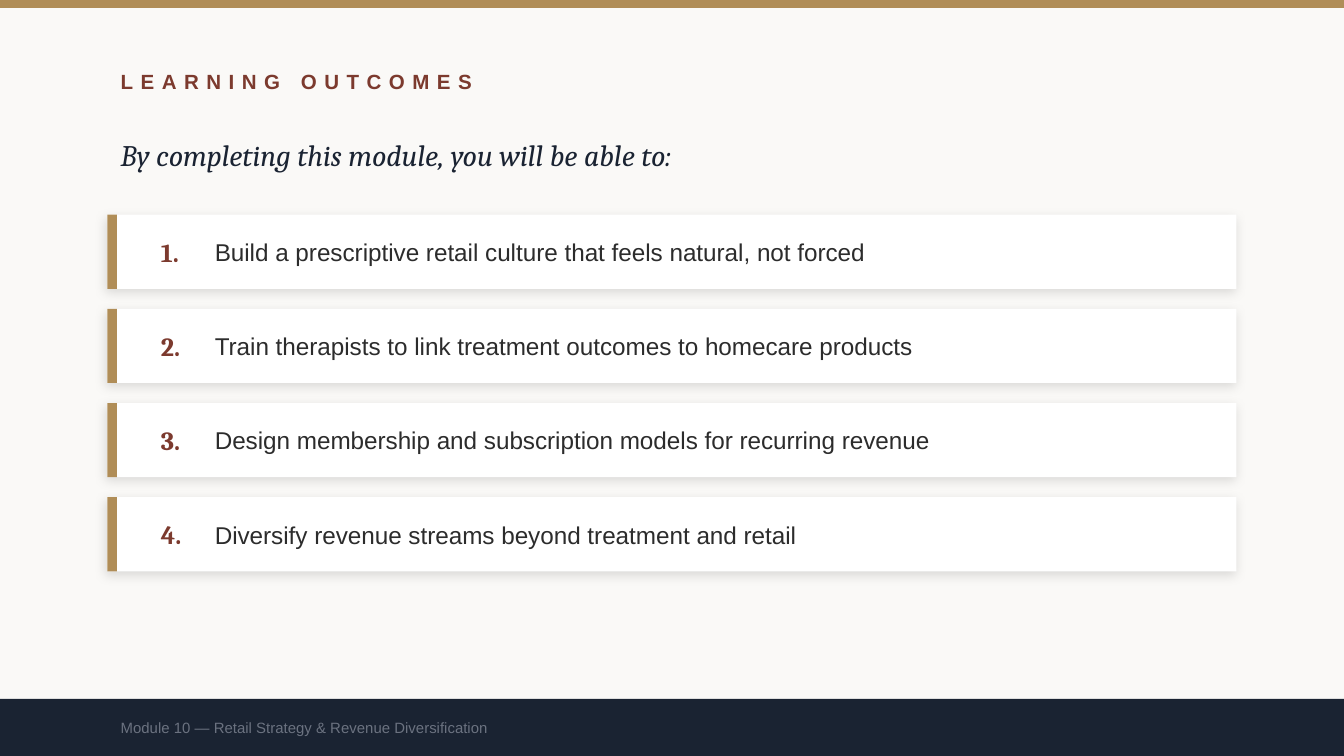
from dataclasses import dataclass

from lxml.etree import SubElement as add_child
from pptx import Presentation
from pptx.dml.color import RGBColor as Color
from pptx.enum.shapes import MSO_SHAPE as Shape
from pptx.enum.text import MSO_ANCHOR as Anchor
from pptx.oxml.ns import qn
from pptx.util import Cm, Pt


@dataclass(frozen=True)
class Theme:
    """Colours and text formats of the deck."""

    paper: str = "FAF9F7"
    card: str = "FFFFFF"
    gold: str = "B08D57"
    rust: str = "7C3A2E"
    navy: str = "1A2332"
    ink: str = "2C2C2C"
    grey: str = "6B7280"
    shadow: str = "000000"

    @property
    def formats(self):
        """Return the font values for each text role."""
        return {
            "heading": ({"name": "Arial", "size": Pt(11), "bold": True}, self.rust),
            "lead": ({"name": "Cambria", "size": Pt(16), "italic": True}, self.navy),
            "number": ({"name": "Cambria", "size": Pt(14), "bold": True}, self.rust),
            "outcome": ({"name": "Arial", "size": Pt(13)}, self.ink),
            "footer": ({"name": "Arial", "size": Pt(8)}, self.grey),
        }


class SlideBuilder:
    """Draw styled elements on the current slide."""

    def __init__(self, slide, theme):
        """Keep the slide and theme and paint the background."""
        self.slide, self.theme = slide, theme
        fill = slide.background.fill
        fill.solid()
        fill.fore_color.rgb = Color.from_string(theme.paper)

    def block(self, left, top, width, height, colour):
        """Add a plain filled rectangle."""
        block = self.slide.shapes.add_shape(
            Shape.RECTANGLE, Cm(left), Cm(top), Cm(width), Cm(height))
        block.shadow.inherit = False
        block.fill.solid()
        block.fill.fore_color.rgb = Color.from_string(colour)
        block.line.fill.background()
        return block

    def text(self, left, top, width, height, words, role, spacing=None):
        """Add a middle-anchored text box in the format of a role."""
        box = self.slide.shapes.add_textbox(Cm(left), Cm(top), Cm(width), Cm(height))
        frame = box.text_frame
        for name, value in {"word_wrap": True, "vertical_anchor": Anchor.MIDDLE}.items():
            setattr(frame, name, value)
        span = frame.paragraphs[0].add_run()
        span.text = words
        values, colour = self.theme.formats[role]
        for name, value in values.items():
            setattr(span.font, name, value)
        span.font.color.rgb = Color.from_string(colour)
        if spacing:
            span._r.get_or_add_rPr().set("spc", str(spacing * 100))

    def soft_shadow(self, block):
        """Give a block a faint blurred outer shadow."""
        effects = block._element.spPr.find(qn("a:effectLst"))
        shadow = add_child(effects, qn("a:outerShdw"), blurRad=str(Pt(6)),
                           dist=str(Pt(2)), dir=str(135 * 60000),
                           algn="bl", rotWithShape="0")
        colour = add_child(shadow, qn("a:srgbClr"), val=self.theme.shadow)
        add_child(colour, qn("a:alpha"), val="12000")

    def outcome(self, top, number, words):
        """Add a numbered card with a gold edge."""
        height = 1.4
        self.soft_shadow(self.block(2.03, top, 21.34, height, self.theme.card))
        self.block(2.03, top, 0.18, height, self.theme.gold)
        self.text(2.79, top, 1.02, height, f"{number}.", "number")
        self.text(3.81, top, 18.8, height, words, "outcome")


def main():
    """Build and save the learning outcomes slide."""
    theme = Theme()
    deck = Presentation()
    deck.slide_width, deck.slide_height = Cm(25.4), Cm(14.29)
    page = SlideBuilder(deck.slides.add_slide(deck.slide_layouts[6]), theme)

    page.block(0, 0, 25.4, 0.15, theme.gold)
    page.text(2.03, 1.02, 20.32, 1.02, "LEARNING OUTCOMES", "heading", spacing=4)
    page.text(2.03, 2.29, 20.32, 1.27,
              "By completing this module, you will be able to:", "lead")

    outcomes = (
        "Build a prescriptive retail culture that feels natural, not forced",
        "Train therapists to link treatment outcomes to homecare products",
        "Design membership and subscription models for recurring revenue",
        "Diversify revenue streams beyond treatment and retail",
    )
    for index, words in enumerate(outcomes):
        page.outcome(4.06 + index * 1.78, index + 1, words)

    page.block(0, 13.21, 25.4, 1.08, theme.navy)
    page.text(2.03, 13.21, 20.32, 1.08,
              "Module 10 — Retail Strategy & Revenue Diversification", "footer")
    deck.save("out.pptx")


if __name__ == "__main__":
    main()
